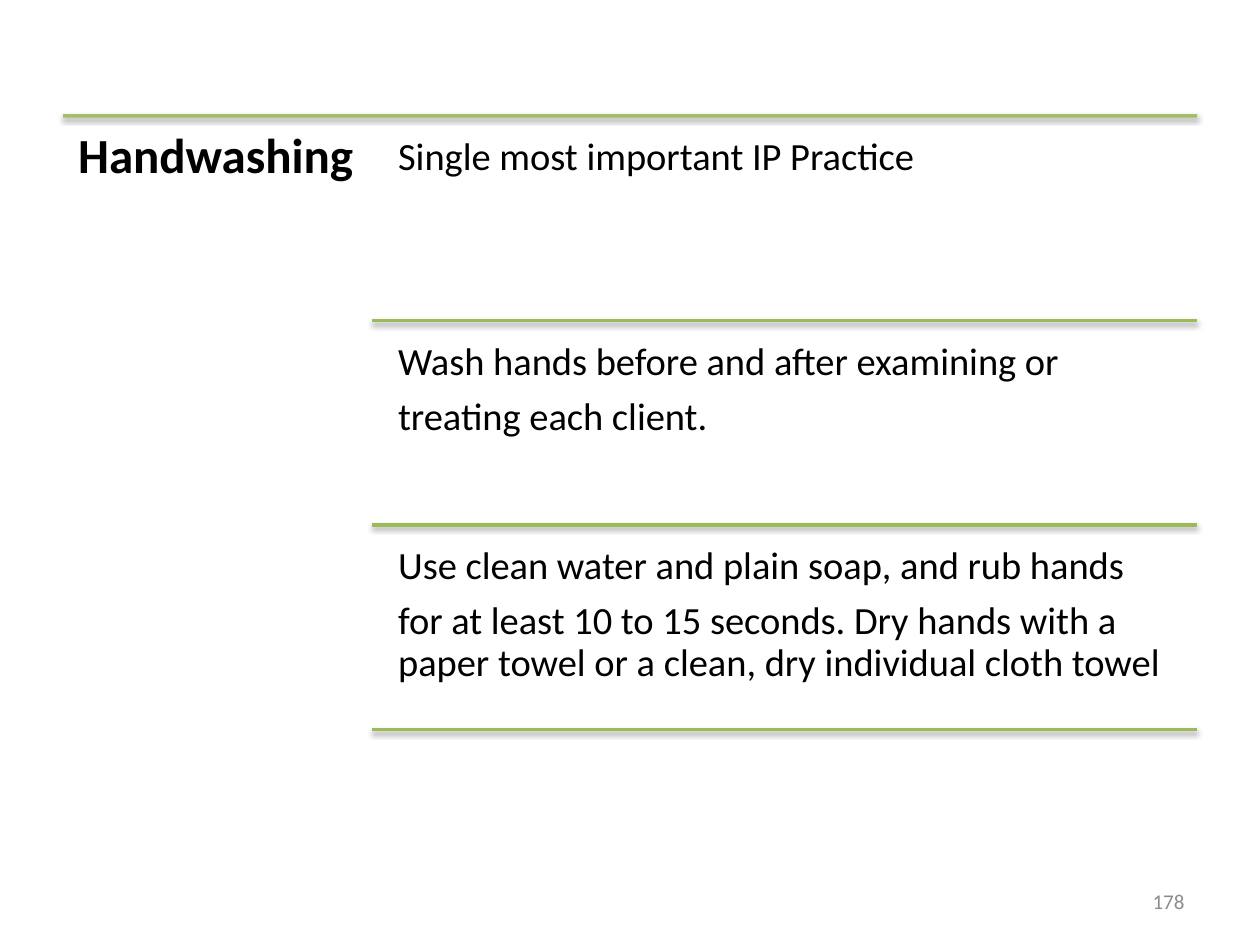
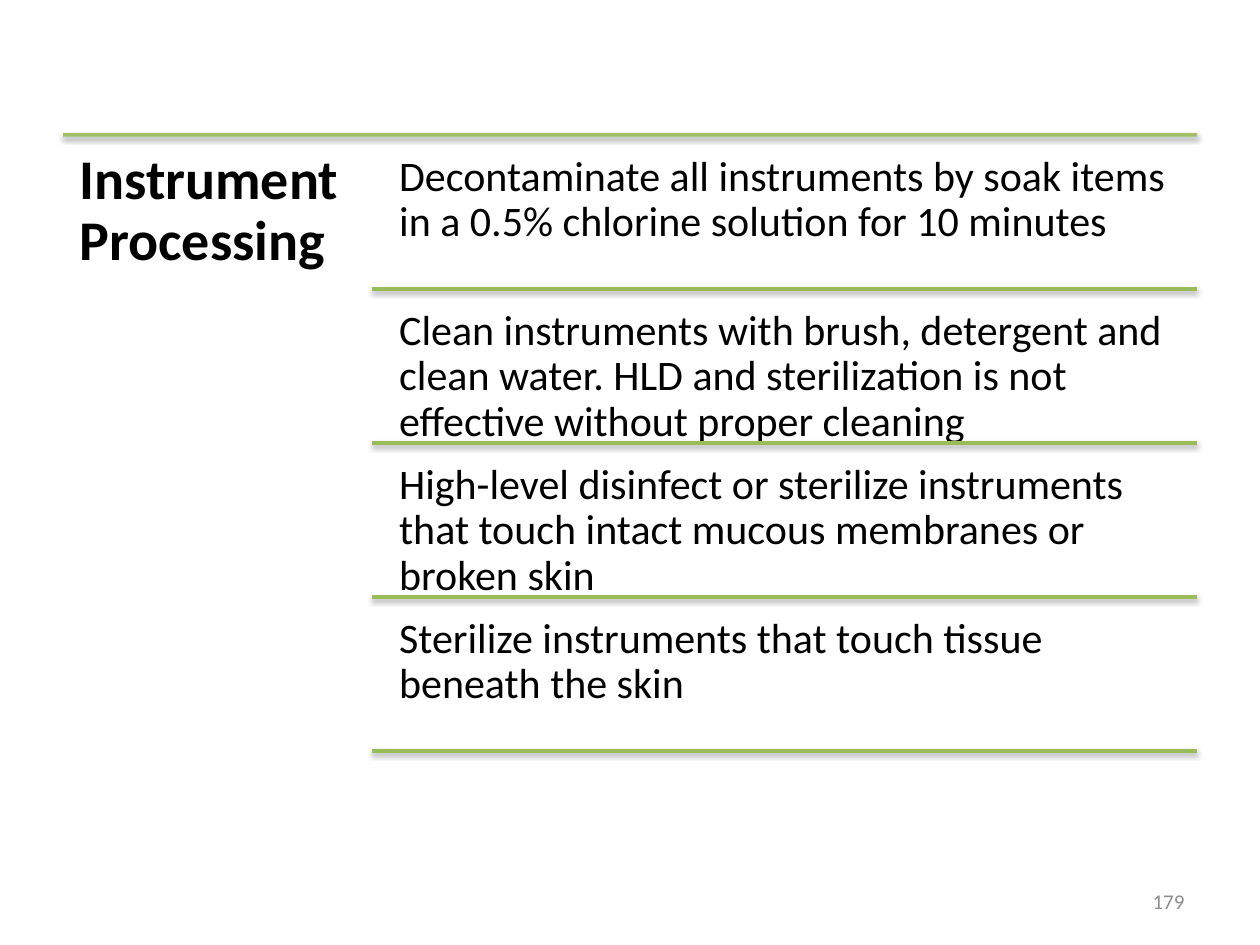
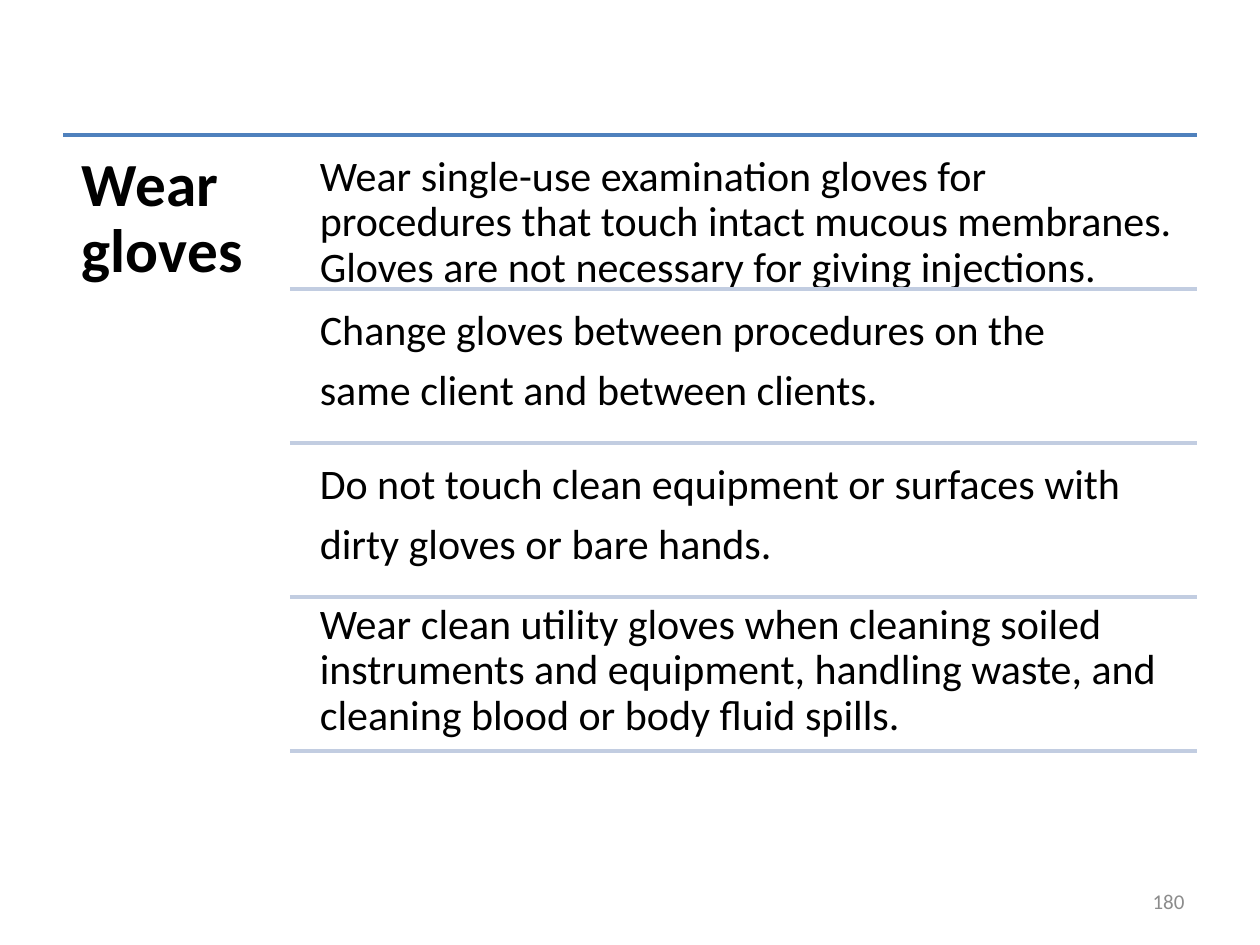
import pptx
import pptx.util
import pptx.dml.color
import pptx.enum.shapes
import pptx.enum.text
import pptx.oxml
import pptx.oxml.ns
from lxml import etree

Inches = pptx.util.Inches
Pt = pptx.util.Pt
Align = pptx.enum.text.PP_ALIGN
Anchor = pptx.enum.text.MSO_ANCHOR

FONT = "Calibri"
COLORS = {
    "text": "000000",
    "number": "8C8C8C",
    "green": "9BBB59",
    "blue": "4F81BD",
    "pale_blue": "C2CDE1",
    "shadow": "000000",
}
LEFT, RIGHT = 0.5, 9.5
LABEL_HEIGHT = 4.95
ROW_GAP = 0.05

GREEN_STYLE = {"top_rule": "green", "row_rule": "green", "shadow": True, "top_alpha": 90}
BLUE_STYLE = {"top_rule": "blue", "row_rule": "pale_blue", "shadow": False, "top_alpha": 100}

TOPICS = [
    {
        "number": "178", "label": "Handwashing", "label_size": 28, "label_inset": 0.12,
        "top": 0.92, "bottom": 5.79, "label_width": 2.45, "indent": 0.12,
        "row_size": 22, "row_inset": 0.09, "style": GREEN_STYLE, "last_shift": 0,
        "rows": [
            ["Single most important IP Practice"],
            ["Wash hands before and after examining or", "treating each client."],
            ["Use clean water and plain soap, and rub hands",
             "for at least 10 to 15 seconds. Dry hands with a paper towel "
             "or a clean, dry individual cloth towel"],
        ],
    },
    {
        "number": "179", "label": "Instrument Processing", "label_size": 32, "label_inset": 0.13,
        "top": 1.07, "bottom": 5.96, "label_width": 2.45, "indent": 0.12,
        "row_size": 24, "row_inset": 0.1, "style": GREEN_STYLE, "last_shift": 0,
        "rows": [
            ["Decontaminate all instruments by soak items in a 0.5% chlorine solution for 10 minutes"],
            ["Clean instruments with brush, detergent and clean water. "
             "HLD and sterilization is not effective without proper cleaning"],
            ["High-level disinfect or sterilize instruments that touch intact "
             "mucous membranes or broken skin"],
            ["Sterilize instruments that touch tissue beneath the skin"],
        ],
    },
    {
        "number": "180", "label": "Wear gloves", "label_size": 35, "label_inset": 0.15,
        "top": 1.07, "bottom": 5.96, "label_width": 1.8, "indent": 0.14,
        "row_size": 24, "row_inset": 0.1, "style": BLUE_STYLE, "last_shift": -0.11,
        "rows": [
            ["Wear single-use examination gloves for procedures that touch intact "
             "mucous membranes. Gloves are not necessary for giving injections."],
            ["Change gloves between procedures on the", "same client and between clients."],
            ["Do not touch clean equipment or surfaces with", "dirty gloves or bare hands."],
            ["Wear clean utility gloves when cleaning soiled instruments and equipment, "
             "handling waste, and cleaning blood or body fluid spills."],
        ],
    },
]


def rgb(name):
    return pptx.dml.color.RGBColor.from_string(COLORS[name])


def add_child(parent, tag, **attributes):
    child = etree.SubElement(parent, pptx.oxml.ns.qn(tag))
    for key, value in attributes.items():
        child.set(key, str(value))
    return child


def add_rule(slide, left, y, color, shadow, alpha=100):
    rule = slide.shapes.add_connector(
        pptx.enum.shapes.MSO_CONNECTOR.STRAIGHT, Inches(left), Inches(y), Inches(RIGHT), Inches(y))
    rule.line.color.rgb = rgb(color)
    rule.line.width = Pt(2)
    properties = rule._element.spPr
    if alpha < 100:
        line_color = properties.find(".//" + pptx.oxml.ns.qn("a:srgbClr"))
        add_child(line_color, "a:alpha", val=alpha * 1000)
    effects = add_child(properties, "a:effectLst")
    if shadow:
        outer = add_child(effects, "a:outerShdw", blurRad=Pt(3.1), dist=Pt(1.6),
                          dir=5400000, rotWithShape=0)
        shade = add_child(outer, "a:srgbClr", val=COLORS["shadow"])
        add_child(shade, "a:alpha", val=38000)


def fill_text(frame, paragraphs, size, color="text", bold=False, align=Align.LEFT,
              anchor=Anchor.TOP, inset=None, spaced=True):
    frame.word_wrap = True
    frame.auto_size = pptx.enum.text.MSO_AUTO_SIZE.NONE
    frame.vertical_anchor = anchor
    if inset is not None:
        frame.margin_left = frame.margin_right = Inches(inset)
        frame.margin_top = frame.margin_bottom = Inches(inset)
    frame.text = "\n".join(paragraphs)
    for paragraph in frame.paragraphs:
        paragraph.alignment = align
        if spaced:
            paragraph.line_spacing = 0.9
            paragraph.space_after = Pt(0.35 * size)
        for run in paragraph.runs:
            run.font.name = FONT
            run.font.size = Pt(size)
            run.font.bold = bold
            run.font.color.rgb = rgb(color)


def place_label(slide, topic):
    label = slide.shapes.title
    label.left, label.top = Inches(LEFT), Inches(topic["top"])
    label.width, label.height = Inches(topic["label_width"]), Inches(LABEL_HEIGHT)
    fill_text(label.text_frame, [topic["label"]], topic["label_size"],
              bold=True, inset=topic["label_inset"])


def add_rows(slide, topic):
    style = topic["style"]
    rows = topic["rows"]
    rule_left = LEFT + topic["label_width"]
    text_left = rule_left + topic["indent"]
    pitch = (topic["bottom"] - topic["top"]) / len(rows)
    gap = ROW_GAP * pitch
    for index, paragraphs in enumerate(rows):
        row_top = topic["top"] + index * pitch
        shift = topic["last_shift"] if index == len(rows) - 1 else 0
        advice = slide.shapes.add_textbox(
            Inches(text_left), Inches(row_top + gap + shift),
            Inches(RIGHT - text_left), Inches(pitch - gap))
        fill_text(advice.text_frame, paragraphs, topic["row_size"], inset=topic["row_inset"])
        add_rule(slide, rule_left, row_top + pitch, style["row_rule"], style["shadow"])


def add_slide_number(slide, number):
    footer = slide.shapes.add_textbox(Inches(7.17), Inches(6.95), Inches(2.33), Inches(0.4))
    fill_text(footer.text_frame, [number], 12, color="number", align=Align.RIGHT,
              anchor=Anchor.MIDDLE, spaced=False)


def add_topic_slide(deck, topic):
    slide = deck.slides.add_slide(deck.slide_layouts.get_by_name("Title Only"))
    style = topic["style"]
    add_rule(slide, LEFT, topic["top"], style["top_rule"], style["shadow"], style["top_alpha"])
    place_label(slide, topic)
    add_rows(slide, topic)
    add_slide_number(slide, topic["number"])


def main():
    deck = pptx.Presentation()
    deck.slide_width, deck.slide_height = Inches(10), Inches(7.5)
    for topic in TOPICS:
        add_topic_slide(deck, topic)
    deck.save("out.pptx")


if __name__ == "__main__":
    main()
